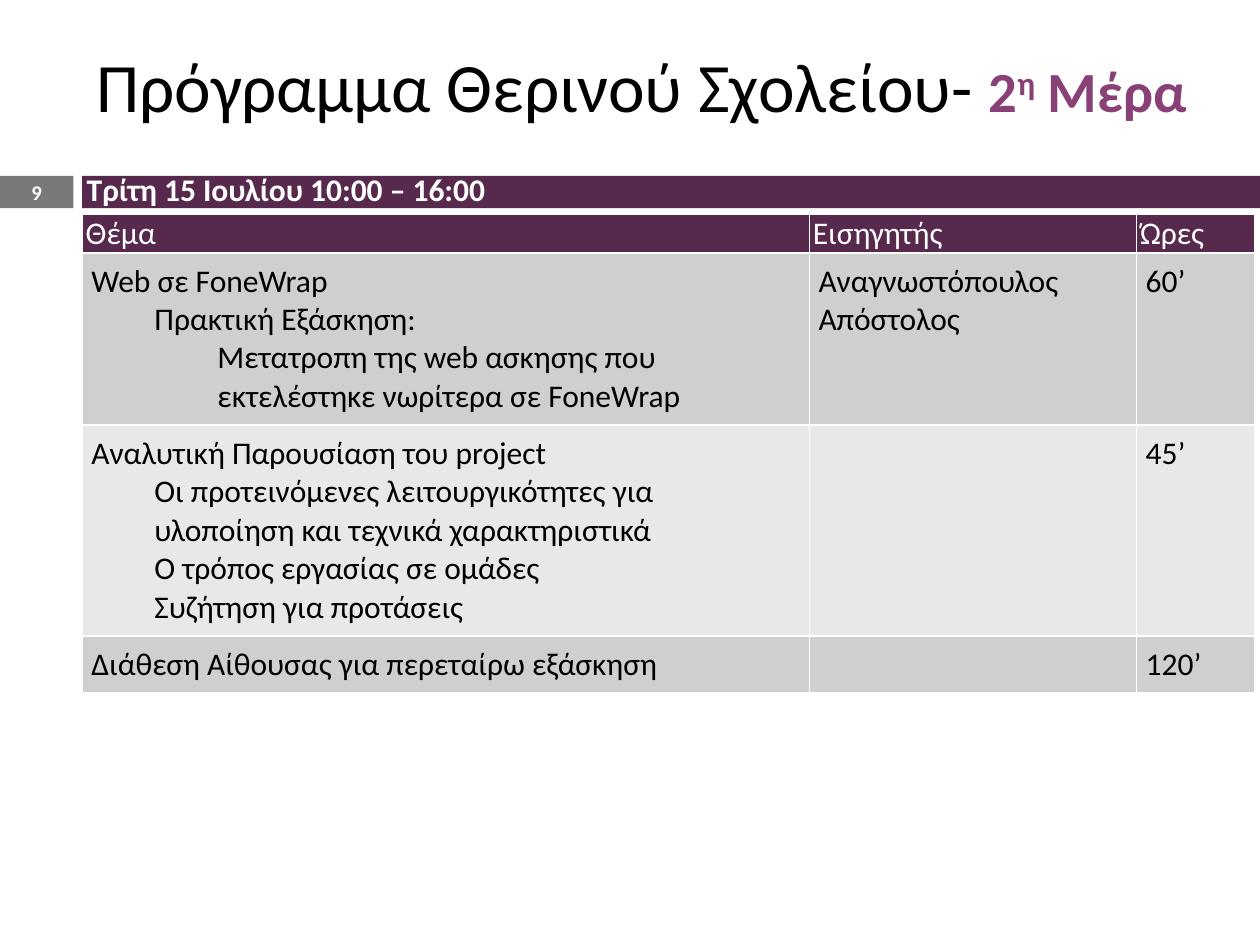
from lxml import etree
from pptx import Presentation
from pptx.dml import color
from pptx.enum import shapes, text
from pptx.oxml import ns
from pptx.util import Pt

PLUM, VIOLET, GREY = "57294C", "884077", "797979"
WHITE, BLACK = "FFFFFF", "000000"
BANDS = ("CFCFCF", "E8E8E8")
COLUMNS = (415.5, 187, 67.5)
HEADINGS = ("Θέμα", "Εισηγητής", "Ώρες")
LINE, MARGIN, HEADING_MARGIN, INDENT = 22, 5.25, 2, 36

SESSIONS = (
    (((0, "Web σε FoneWrap"),
      (1, "Πρακτική Εξάσκηση:"),
      (2, "Μετατροπη της web ασκησης που εκτελέστηκε νωρίτερα σε FoneWrap")),
     "Αναγνωστόπουλος Απόστολος", "60’", 4),
    (((0, "Αναλυτική Παρουσίαση του project"),
      (1, "Οι προτεινόμενες λειτουργικότητες για υλοποίηση και τεχνικά χαρακτηριστικά"),
      (1, "Ο τρόπος εργασίας σε ομάδες"),
      (1, "Συζήτηση για προτάσεις")),
     "", "45’", 5),
    (((0, "Διάθεση Αίθουσας για περεταίρω εξάσκηση"),), "", "120’", 1),
)


def rgb(value):
    """Turn a hex string into a colour."""
    return color.RGBColor.from_string(value)


def style(font, size, tint, bold=False):
    """Set the typeface, size, colour and weight of a font."""
    font.name, font.size, font.bold = "Calibri", Pt(size), bold
    font.color.rgb = rgb(tint)


def add_bar(slide, left, top, width, height, fill):
    """Draw a plain filled rectangle."""
    bar = slide.shapes.add_shape(
        shapes.MSO_SHAPE.RECTANGLE, Pt(left), Pt(top), Pt(width), Pt(height))
    bar.shadow.inherit = False
    bar.fill.solid()
    bar.fill.fore_color.rgb = rgb(fill)
    bar.line.fill.background()
    return bar


def add_frame(slide, left, top, width, height):
    """Add a wrapping text box and return its text frame."""
    frame = slide.shapes.add_textbox(
        Pt(left), Pt(top), Pt(width), Pt(height)).text_frame
    frame.word_wrap = True
    return frame


def add_title(slide, left, top, width, height):
    """Write the programme title with the day number in violet."""
    frame = add_frame(slide, left, top, width, height)
    frame.vertical_anchor = text.MSO_ANCHOR.MIDDLE
    title = frame.paragraphs[0]
    for wording, size, tint, bold, raised in (
            ("Πρόγραμμα Θερινού Σχολείου- ", 39.6, BLACK, False, False),
            ("2", 32.4, VIOLET, True, False),
            ("η", 32.4, VIOLET, True, True),
            (" Μέρα", 32.4, VIOLET, True, False)):
        run = title.add_run()
        run.text = wording
        style(run.font, size, tint, bold)
        if raised:
            run._r.get_or_add_rPr().set("baseline", "30000")


def add_day_band(slide, left, top, width, height):
    """Draw the page number and the band with the date and hours."""
    number_width, gap = 42, 5
    number = add_bar(slide, left, top, number_width, height, GREY).text_frame
    number.vertical_anchor = text.MSO_ANCHOR.MIDDLE
    number.margin_top = number.margin_bottom = 0
    page = number.paragraphs[0]
    page.text, page.alignment = "9", text.PP_ALIGN.CENTER
    style(page.font, 11.9, WHITE, True)

    band_left = left + number_width + gap
    add_bar(slide, band_left, top, width - number_width - gap, height, PLUM)
    day = add_frame(slide, band_left - 4.5, top - 7, 345.6, 29).paragraphs[0]
    day.text = "Τρίτη 15 Ιουλίου 10:00 – 16:00"
    style(day.font, 18, WHITE, True)


def add_borders(cell):
    """Give a cell white one-point borders on all sides."""
    properties = cell._tc.get_or_add_tcPr()
    for position, side in enumerate(("lnL", "lnR", "lnT", "lnB")):
        border = etree.Element(ns.qn("a:" + side), w=str(Pt(1)))
        fill = etree.SubElement(border, ns.qn("a:solidFill"))
        etree.SubElement(fill, ns.qn("a:srgbClr"), val=WHITE)
        properties.insert(position, border)


def fill_cell(cell, lines, fill, tint, side, end):
    """Write indented lines into a cell with the given margins and colours."""
    cell.fill.solid()
    cell.fill.fore_color.rgb = rgb(fill)
    add_borders(cell)
    cell.margin_left = cell.margin_right = Pt(side)
    cell.margin_top = cell.margin_bottom = Pt(end)
    frame = cell.text_frame
    for index, (level, wording) in enumerate(lines):
        line = frame.add_paragraph() if index else frame.paragraphs[0]
        line.text, line.level = wording, level
        style(line.font, 18, tint)
        if level:
            indent = line._p.get_or_add_pPr()
            indent.set("marL", str(Pt(INDENT * level)))
            indent.set("indent", "0")


def add_programme(slide, left, top):
    """Build the table of sessions, each row as tall as its text."""
    heights = [LINE] + [LINE * rows + 2 * MARGIN for *_, rows in SESSIONS]
    table = slide.shapes.add_table(
        len(heights), len(COLUMNS), Pt(left), Pt(top),
        Pt(sum(COLUMNS)), Pt(sum(heights))).table
    for column, width in zip(table.columns, COLUMNS):
        column.width = Pt(width)
    for row, height in zip(table.rows, heights):
        row.height = Pt(height)
    for column, heading in enumerate(HEADINGS):
        fill_cell(table.cell(0, column), [(0, heading)], PLUM, WHITE,
                  HEADING_MARGIN, 0)
    for row, (topic, speaker, duration, _) in enumerate(SESSIONS):
        for column, lines in enumerate((topic, [(0, speaker)], [(0, duration)])):
            fill_cell(table.cell(row + 1, column), lines,
                      BANDS[row % len(BANDS)], BLACK, MARGIN, MARGIN)


def main():
    """Build and save the slide."""
    deck = Presentation()
    deck.slide_width, deck.slide_height = Pt(720), Pt(540)
    slide = deck.slides.add_slide(deck.slide_layouts[6])
    add_day_band(slide, 0, 100.5, 720, 18.5)
    add_programme(slide, 47, 122.5)
    add_title(slide, 48, 9.5, 652, 78)
    deck.save("out.pptx")


if __name__ == "__main__":
    main()
